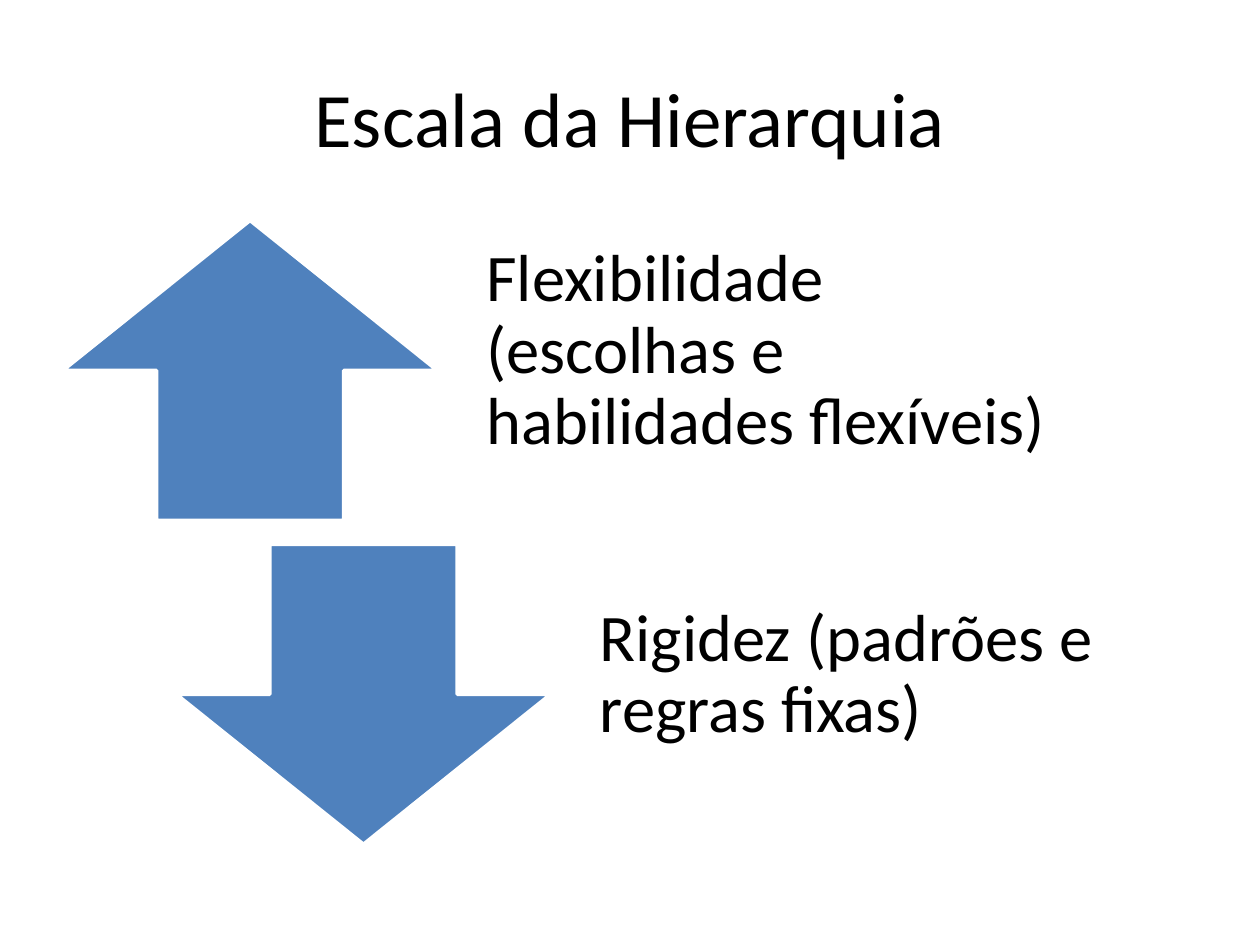
from pptx import Presentation
from pptx.dml.color import RGBColor
from pptx.enum.shapes import MSO_SHAPE
from pptx.enum.text import MSO_ANCHOR, PP_ALIGN
from pptx.util import Pt

PX = 9144  # EMU per px, 100 px to the inch
BLUE = RGBColor(0x4F, 0x81, 0xBD)
WHITE = RGBColor(0xFF, 0xFF, 0xFF)
BLACK = RGBColor(0x00, 0x00, 0x00)
FONT = "Calibri"
UP, DOWN = MSO_SHAPE.UP_ARROW, MSO_SHAPE.DOWN_ARROW
MIDDLE = MSO_ANCHOR.MIDDLE
LEFT, CENTER = PP_ALIGN.LEFT, PP_ALIGN.CENTER

ARROW_WIDTH, TEXT_OFFSET = 297, 306
ROW_WIDTH, ROW_HEIGHT = 810, 238
ROW_LEFT, ROW_TOP = 50, 175
ROW_SHIFT, ROW_PITCH = 90, 257
ROWS = [
    (UP, "Flexibilidade (escolhas e habilidades flexíveis)"),
    (DOWN, "Rigidez (padrões e regras fixas)"),
]


def scale(*lengths):
    return [length * PX for length in lengths]


def add_text(slide, box, text, size, alignment, insets):
    frame = slide.shapes.add_textbox(*scale(*box)).text_frame
    frame.word_wrap = True
    frame.vertical_anchor = MIDDLE
    (frame.margin_left, frame.margin_top,
     frame.margin_right, frame.margin_bottom) = scale(*insets)
    frame.text = text
    paragraph = frame.paragraphs[0]
    paragraph.alignment = alignment
    font = paragraph.runs[0].font
    font.name, font.size = FONT, Pt(size)
    font.color.rgb = BLACK
    return paragraph


def add_title(slide, box):
    add_text(slide, box, "Escala da Hierarquia", 44, CENTER, (10, 5, 10, 5))


def add_arrow_row(slide, box, arrow_type, text):
    left, top, width, height = box
    # Arrow
    arrow = slide.shapes.add_shape(
        arrow_type, *scale(left, top, ARROW_WIDTH, height))
    arrow.shadow.inherit = False
    arrow.fill.solid()
    arrow.fill.fore_color.rgb = BLUE
    arrow.line.color.rgb = WHITE
    arrow.line.width = Pt(2)
    # Description
    text_box = (left + TEXT_OFFSET, top, width - TEXT_OFFSET, height)
    paragraph = add_text(slide, text_box, text, 38, LEFT, (30, 0, 30, 30))
    paragraph.line_spacing = 0.9


def main():
    presentation = Presentation()
    presentation.slide_width, presentation.slide_height = scale(1000, 750)
    slide = presentation.slides.add_slide(presentation.slide_layouts[6])
    add_title(slide, (50, 30, 900, 125))
    for index, (arrow_type, text) in enumerate(ROWS):
        box = (ROW_LEFT + index * ROW_SHIFT, ROW_TOP + index * ROW_PITCH,
               ROW_WIDTH, ROW_HEIGHT)
        add_arrow_row(slide, box, arrow_type, text)
    presentation.save("out.pptx")


if __name__ == "__main__":
    main()
